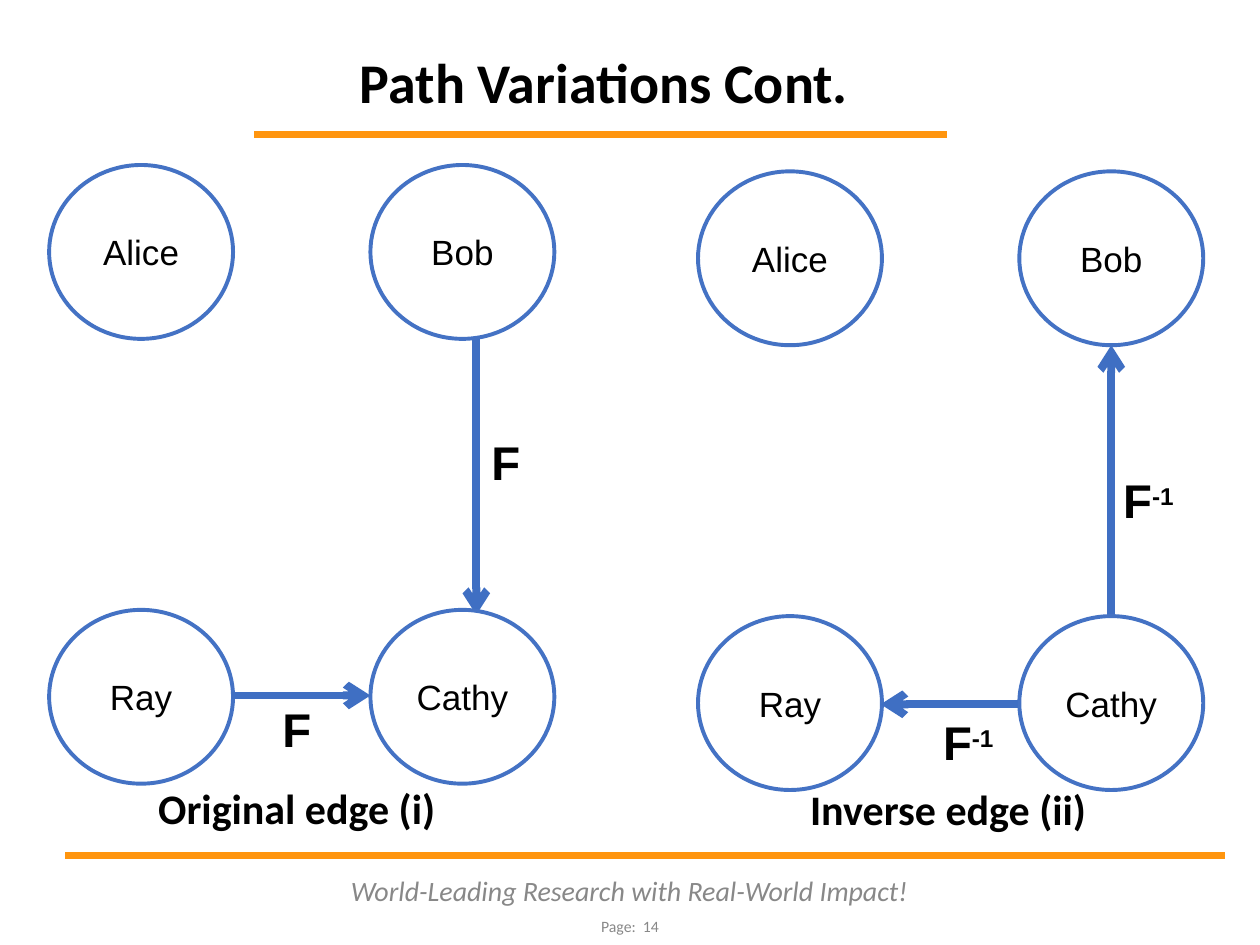
from lxml.etree import SubElement
from pptx import Presentation
from pptx.dml.color import RGBColor
from pptx.enum.shapes import MSO_CONNECTOR, MSO_SHAPE
from pptx.enum.text import MSO_ANCHOR, PP_ALIGN
from pptx.oxml.ns import qn
from pptx.util import Pt

PX = 9144  # 100 px to the inch
COLORS = {
    "black": "000000", "white": "FFFFFF", "gray": "888888",
    "orange": "FF950E", "ring": "4472C4", "arrow": "3F6FC3",
}

deck = Presentation()
deck.slide_width, deck.slide_height = 1000 * PX, 750 * PX
slide = deck.slides.add_slide(deck.slide_layouts[6])
shapes = slide.shapes


def write(text, box, shape=None, font="Arial", size=27, color="black",
          bold=False, italic=False, anchor=MSO_ANCHOR.TOP, sup=""):
    """Put centred text in a box, or in a preset shape of that size."""
    place = [n * PX for n in box]
    item = shapes.add_shape(shape, *place) if shape else shapes.add_textbox(*place)
    frame = item.text_frame
    frame.word_wrap = True
    frame.vertical_anchor = anchor
    para = frame.paragraphs[0]
    para.alignment = PP_ALIGN.CENTER
    for part, points in ((text, size), (sup, 24)):
        if part:
            run = para.add_run()
            run.text = part
            run.font.name, run.font.size = font, Pt(points)
            run.font.bold, run.font.italic = bold, italic
            run.font.color.rgb = RGBColor.from_string(COLORS[color])
    if sup:
        run.font._element.set("baseline", "30000")
    if shape:
        item.shadow.inherit = False
        item.fill.solid()
        item.fill.fore_color.rgb = RGBColor.from_string(COLORS["white"])
        item.line.fill.background()
    return item


def draw(ends, color, width, arrow=False):
    """Draw a straight line, with an open arrowhead at its end if asked."""
    link = shapes.add_connector(MSO_CONNECTOR.STRAIGHT, *[n * PX for n in ends])
    link.line.color.rgb = RGBColor.from_string(COLORS[color])
    link.line.width = Pt(width)
    if arrow:
        SubElement(link.line._get_or_add_ln(), qn("a:tailEnd"), type="arrow")
    SubElement(link._element.spPr, qn("a:effectLst"))


# Rules and footer
draw((202, 107, 752, 107), "orange", 4)
draw((52, 679, 972, 679), "orange", 4)
write("World-Leading Research with Real-World Impact!", (258, 689, 483, 36),
      font="Calibri", size=16, color="gray", italic=True, anchor=MSO_ANCHOR.MIDDLE)
write("Page:  14", (406, 717, 188, 36), font="Calibri", size=9, color="gray",
      anchor=MSO_ANCHOR.MIDDLE)

# Title
write("Path Variations Cont.", (210, 45, 539, 51), shape=MSO_SHAPE.RECTANGLE,
      font="Calibri", size=32, bold=True, anchor=MSO_ANCHOR.BOTTOM)

# Two graphs: origin, arrows, edge labels, caption
graphs = [
    (39, 131, (378, 267, 378, 488), (184, 552, 294, 552),
     [(335, 339), (169, 551)], "", "Original edge (i)", (100, 616)),
    (554, 136, (882, 489, 882, 274), (808, 559, 699, 559),
     [(845, 369), (702, 561)], "-1", "Inverse edge (ii)", (617, 617)),
]
nodes = [("Alice", 0, 0), ("Cathy", 1, 1), ("Bob", 1, 0), ("Ray", 0, 1)]

for left, top, upright, level, labels, sup, title, spot in graphs:
    # The upright arrow lies behind the nodes
    draw(upright, "arrow", 4.5, arrow=True)
    for name, col, row in nodes:
        node = write(name, (left + 255 * col, top + 353 * row, 146, 138),
                     shape=MSO_SHAPE.OVAL, size=20, anchor=MSO_ANCHOR.MIDDLE)
        node.line.color.rgb = RGBColor.from_string(COLORS["ring"])
        node.line.width = Pt(2.25)
    draw(level, "arrow", 4.5, arrow=True)
    for label in labels:
        write("F", (*label, 133, 56), bold=True, sup=sup)
    write(title, (*spot, 271, 50), font="Calibri", size=24, bold=True)

deck.save("out.pptx")
